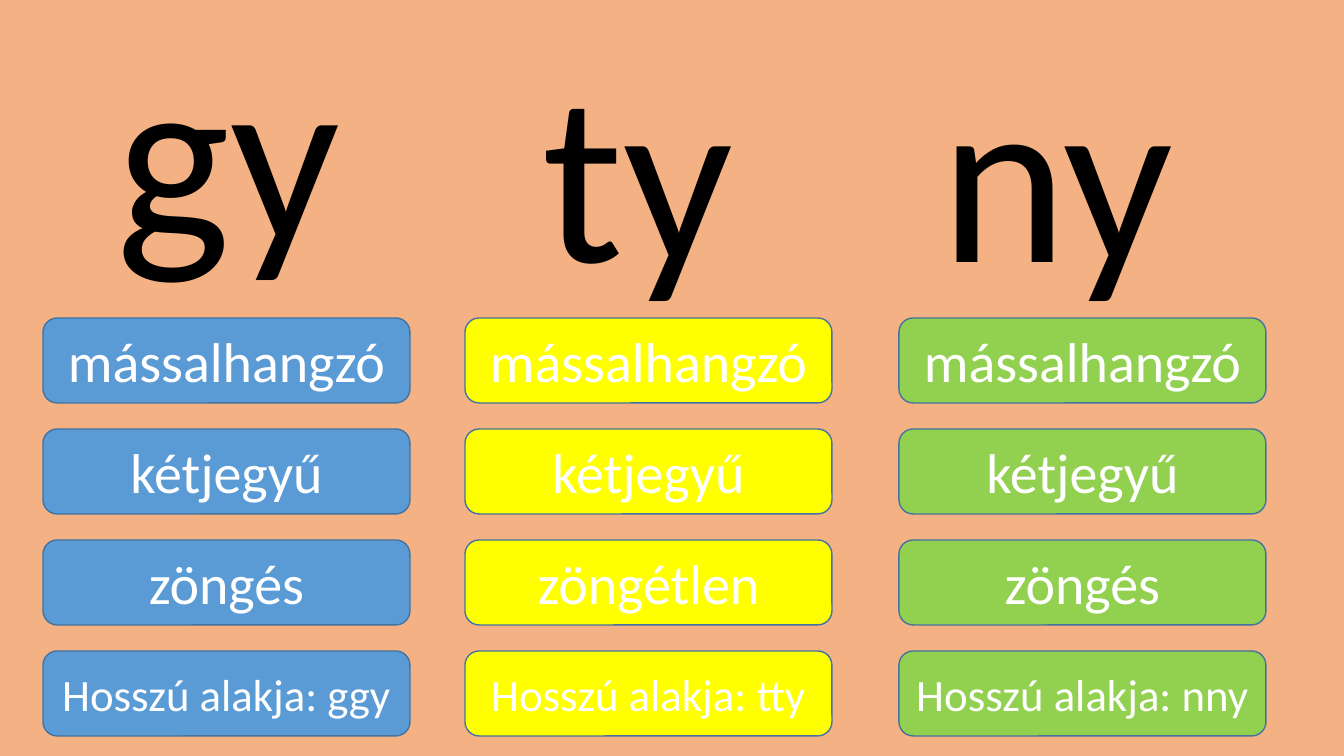
from pptx import Presentation
from pptx.dml.color import RGBColor
from pptx.enum.shapes import MSO_SHAPE
from pptx.enum.text import MSO_ANCHOR, MSO_AUTO_SIZE, PP_ALIGN
from pptx.util import Pt

PEACH = RGBColor(0xF4, 0xB1, 0x83)
BLUE = RGBColor(0x5B, 0x9B, 0xD5)
YELLOW = RGBColor(0xFF, 0xFF, 0x00)
GREEN = RGBColor(0x92, 0xD0, 0x50)
EDGE = RGBColor(0x43, 0x73, 0x9E)
BLACK = RGBColor(0, 0, 0)
WHITE = RGBColor(0xFF, 0xFF, 0xFF)

SCALE = 914400 / 100.8
TOP, STEP = 318, 111
CARD_W, CARD_H = 367, 85

# letters, letter left, letter top, card left, fill, voicing
COLUMNS = [
    ("gy", 107, -6, 43, BLUE, "zöngés"),
    ("ty", 533, 15, 465, YELLOW, "zöngétlen"),
    ("ny", 931, 15, 899, GREEN, "zöngés"),
]


def px(*values):
    """Turn pixel lengths into EMU."""
    return [round(v * SCALE) for v in values]


def write(frame, text, size, color, align=PP_ALIGN.LEFT, anchor=MSO_ANCHOR.TOP):
    frame.word_wrap = True
    frame.vertical_anchor = anchor
    para = frame.paragraphs[0]
    para.alignment = align
    run = para.add_run()
    run.text = text
    run.font.name = "Calibri"
    run.font.size = Pt(size)
    run.font.color.rgb = color


def add_letters(slide, text, left, top):
    frame = slide.shapes.add_textbox(*px(left, top, 359, 303)).text_frame
    write(frame, text, 173, BLACK)
    frame.auto_size = MSO_AUTO_SIZE.SHAPE_TO_FIT_TEXT


def add_card(slide, text, left, top, fill, size):
    card = slide.shapes.add_shape(
        MSO_SHAPE.ROUNDED_RECTANGLE, *px(left, top, CARD_W, CARD_H))
    card.shadow.inherit = False
    card.fill.solid()
    card.fill.fore_color.rgb = fill
    card.line.color.rgb = EDGE
    card.line.width = Pt(1)
    write(card.text_frame, text, size, WHITE,
          align=PP_ALIGN.CENTER, anchor=MSO_ANCHOR.MIDDLE)


def main():
    deck = Presentation()
    deck.slide_width, deck.slide_height = px(1344, 756)
    slide = deck.slides.add_slide(deck.slide_layouts[6])
    slide.background.fill.solid()
    slide.background.fill.fore_color.rgb = PEACH

    for letters, x, y, left, fill, voice in COLUMNS:
        add_letters(slide, letters, x, y)
        long_form = f"Hosszú alakja: {letters[0]}{letters}"
        cards = [("mássalhangzó", 40), ("kétjegyű", 40),
                 (voice, 40), (long_form, 32)]
        for row, (text, size) in enumerate(cards):
            add_card(slide, text, left, TOP + row * STEP, fill, size)

    deck.save("out.pptx")


if __name__ == "__main__":
    main()
